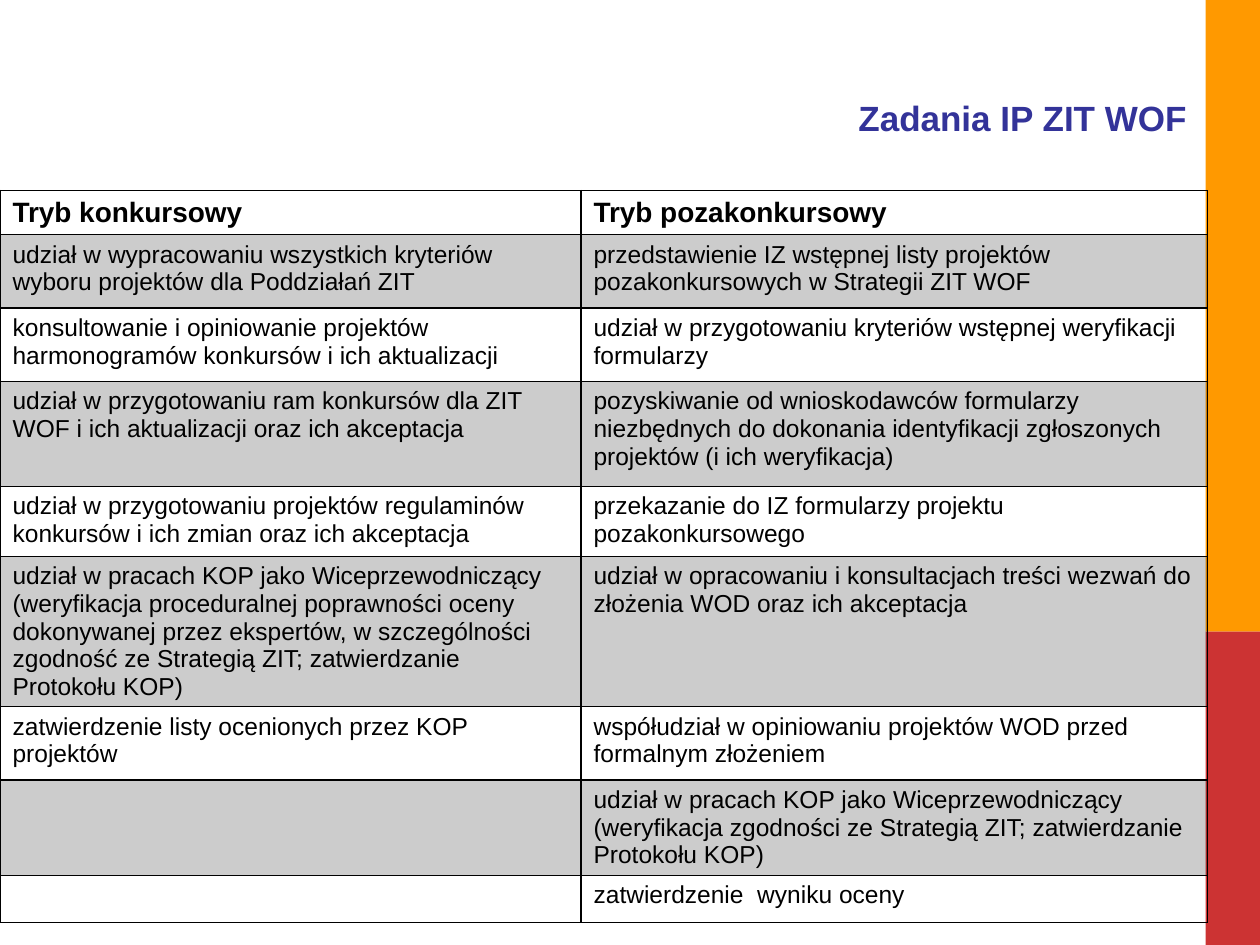
from lxml import etree
from pptx import Presentation
from pptx import util as u
from pptx.dml import color
from pptx.enum import shapes, text
from pptx.oxml import ns

HUES = {
    "orange": "FF9900",
    "red": "CC3333",
    "title": "333399",
    "ink": "000000",
}
FONT = "Arial"
COLS = [332, 358]
HEIGHTS = [23, 42, 42, 60, 40, 77, 42, 42, 27]
ROWS = [
    ("Tryb konkursowy", "Tryb pozakonkursowy"),
    ("udział w wypracowaniu wszystkich kryteriów wyboru projektów dla Poddziałań ZIT",
     "przedstawienie IZ wstępnej listy projektów pozakonkursowych w Strategii ZIT WOF"),
    ("konsultowanie i opiniowanie projektów harmonogramów konkursów i ich aktualizacji",
     "udział w przygotowaniu kryteriów wstępnej weryfikacji formularzy"),
    ("udział w przygotowaniu ram konkursów dla ZIT WOF i ich aktualizacji oraz ich akceptacja",
     "pozyskiwanie od wnioskodawców formularzy niezbędnych do dokonania identyfikacji "
     "zgłoszonych projektów (i ich weryfikacja)"),
    ("udział w przygotowaniu projektów regulaminów konkursów i ich zmian oraz ich akceptacja",
     "przekazanie do IZ formularzy projektu pozakonkursowego"),
    ("udział w pracach KOP jako Wiceprzewodniczący (weryfikacja proceduralnej poprawności "
     "oceny dokonywanej przez ekspertów, w szczególności zgodność ze Strategią ZIT; "
     "zatwierdzanie Protokołu KOP)",
     "udział w opracowaniu i konsultacjach treści wezwań do złożenia WOD oraz ich akceptacja"),
    ("zatwierdzenie listy ocenionych przez KOP projektów",
     "współudział w opiniowaniu projektów WOD przed formalnym złożeniem"),
    ("",
     "udział w pracach KOP jako Wiceprzewodniczący (weryfikacja zgodności ze Strategią ZIT; "
     "zatwierdzanie Protokołu KOP)"),
    ("", "zatwierdzenie  wyniku oceny"),
]


def rgb(name):
    return color.RGBColor.from_string(HUES[name])


def sub(node, tag, **attrs):
    return etree.SubElement(node, ns.qn(tag), attrs)


def add_run(para, words, size, hue, bold=False):
    run = para.add_run()
    run.text = words
    font = run.font
    font.name, font.size, font.bold = FONT, u.Pt(size), bold
    font.color.rgb = rgb(hue)


def add_bar(slide, top, height, hue):
    bar = slide.shapes.add_shape(shapes.MSO_SHAPE.RECTANGLE,
                                 u.Pt(689), u.Pt(top), u.Pt(31), u.Pt(height))
    bar.shadow.inherit = False
    bar.fill.solid()
    bar.fill.fore_color.rgb = rgb(hue)
    bar.line.fill.background()


def set_title(slide, words):
    title = slide.shapes.title
    title.left, title.top = u.Pt(175), u.Pt(22)
    title.width, title.height = u.Pt(510.5), u.Pt(90)
    frame = title.text_frame
    frame.vertical_anchor = text.MSO_ANCHOR.MIDDLE
    para = frame.paragraphs[0]
    para.alignment = text.PP_ALIGN.RIGHT
    add_run(para, words, 20, "title", True)


def add_edges(cell):
    props = cell._tc.get_or_add_tcPr()
    for side in ("a:lnL", "a:lnR", "a:lnT", "a:lnB"):
        line = sub(props, side, w=str(u.Pt(1)))
        sub(sub(line, "a:solidFill"), "a:srgbClr", val=HUES["ink"])


def shade(cell, dark):
    if not dark:
        cell.fill.background()
        return
    cell.fill.solid()
    cell.fill.fore_color.rgb = rgb("ink")
    tint = cell._tc.tcPr.find(".//" + ns.qn("a:solidFill") + "[last()]")
    tint = cell._tc.tcPr.findall(ns.qn("a:solidFill"))[-1][0]
    sub(tint, "a:alpha", val="20000")


def fill_cell(cell, words, head, dark):
    add_edges(cell)
    shade(cell, dark)
    para = cell.text_frame.paragraphs[0]
    if words:
        add_run(para, words, 16 if head else 14, "ink", head)
    else:
        # An empty cell keeps the body size, so its row does not grow
        sub(para._p, "a:endParaRPr", sz="1400")


def add_grid(slide):
    grid = slide.shapes.add_table(len(ROWS), len(COLS), u.Pt(0), u.Pt(109),
                                  u.Pt(sum(COLS)), u.Pt(sum(HEIGHTS))).table
    grid.first_row = grid.horz_banding = False
    for col, width in zip(grid.columns, COLS):
        col.width = u.Pt(width)
    for r, (row, height) in enumerate(zip(grid.rows, HEIGHTS)):
        row.height = u.Pt(height)
        for cell, words in zip(row.cells, ROWS[r]):
            fill_cell(cell, words, head=r == 0, dark=r % 2 == 1)


def main():
    deck = Presentation()
    deck.slide_width, deck.slide_height = u.Pt(720), u.Pt(540)
    slide = deck.slides.add_slide(deck.slide_layouts[5])
    # Side stripe
    add_bar(slide, 0, 361, "orange")
    add_bar(slide, 361, 179, "red")
    # Heading and task table
    set_title(slide, "Zadania IP ZIT WOF")
    add_grid(slide)
    deck.save("out.pptx")


if __name__ == "__main__":
    main()
